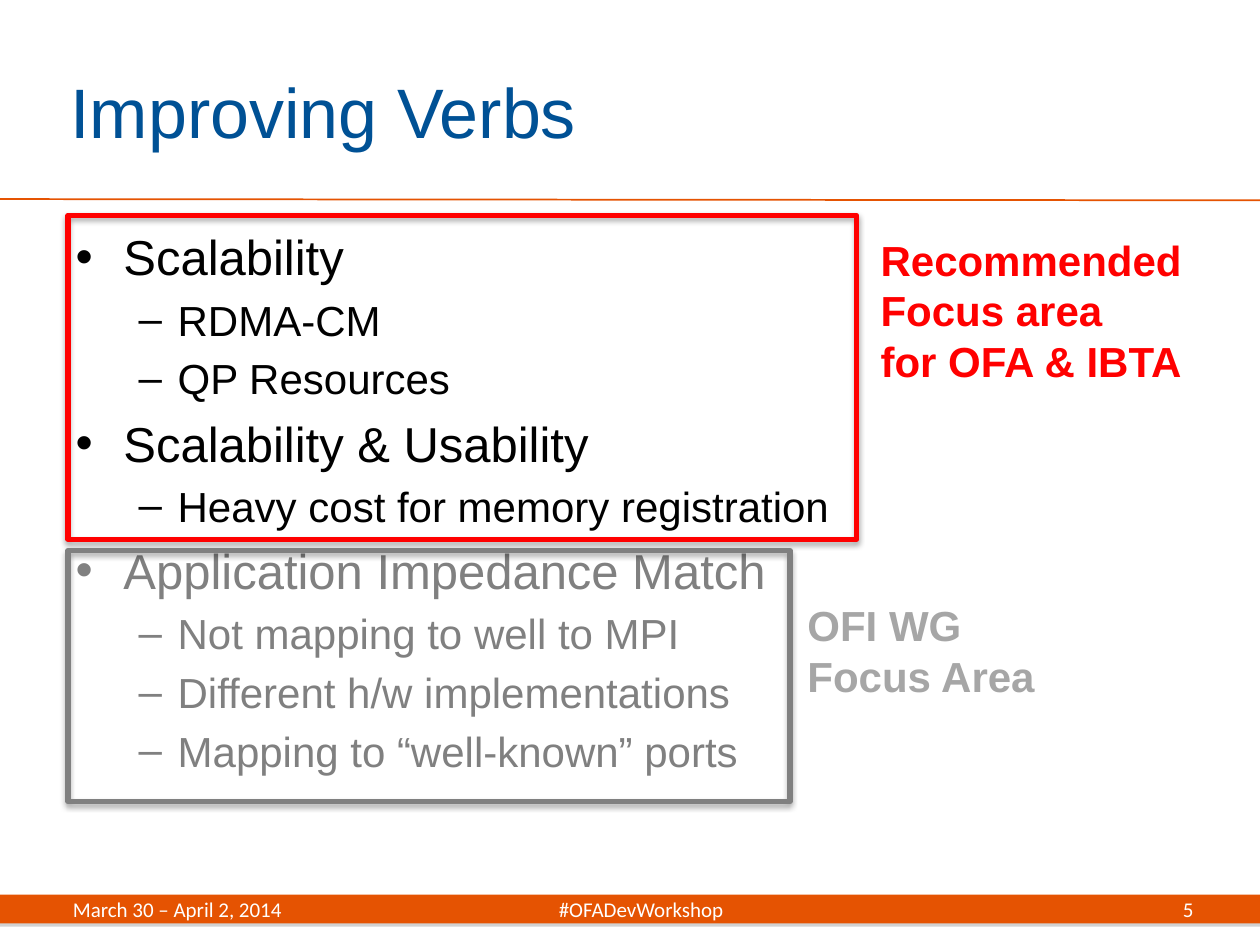
from lxml.etree import SubElement
from pptx import Presentation
from pptx.dml.color import RGBColor
from pptx.enum.shapes import MSO_CONNECTOR, MSO_SHAPE
from pptx.enum.text import MSO_ANCHOR, MSO_AUTO_SIZE, PP_ALIGN
from pptx.oxml import parse_xml
from pptx.oxml.ns import nsdecls, qn
from pptx.util import Inches, Pt

ORANGE = RGBColor(0xE5, 0x53, 0x02)
BLUE = RGBColor(0x00, 0x51, 0x95)
RED = RGBColor(0xFF, 0x00, 0x00)
GRAY = RGBColor(0x80, 0x80, 0x80)
LIGHT_GRAY = RGBColor(0xA6, 0xA6, 0xA6)
BLACK = RGBColor(0x00, 0x00, 0x00)
WHITE = RGBColor(0xFF, 0xFF, 0xFF)

BAR_TOP, BAR_HEIGHT = 7.1, 0.23


def style_text(paragraphs, font_name, size, color, bold=False):
    for paragraph in paragraphs:
        for run in paragraph.runs:
            run.font.name, run.font.size = font_name, Pt(size)
            run.font.color.rgb, run.font.bold = color, bold


def add_box(left, top, width, height, shadow_color, blur):
    box = slide.shapes.add_shape(MSO_SHAPE.RECTANGLE, Inches(left), Inches(top),
                                 Inches(width), Inches(height))
    box._element.spPr.append(parse_xml(
        f'<a:effectLst {nsdecls("a")}><a:outerShdw blurRad="{Pt(blur)}" dist="{Pt(1.8)}" '
        f'dir="5400000" rotWithShape="0"><a:srgbClr val="{shadow_color}">'
        '<a:alpha val="35000"/></a:srgbClr></a:outerShdw></a:effectLst>'))
    return box


prs = Presentation()
prs.slide_width, prs.slide_height = Inches(10), Inches(7.5)
slide = prs.slides.add_slide(prs.slide_layouts[1])

# Footer bar and rule under the title
bar = add_box(0, BAR_TOP, 10, BAR_HEIGHT, GRAY, 0)
bar.fill.solid()
bar.fill.fore_color.rgb = ORANGE
bar.line.fill.background()

rule = slide.shapes.add_connector(MSO_CONNECTOR.STRAIGHT, 0, Inches(1.58),
                                  prs.slide_width, Inches(1.59))
rule.line.color.rgb = ORANGE
rule.line.width = Pt(1)
SubElement(rule._element.spPr, qn("a:effectLst"))

# Title
title = slide.shapes.title
title.left, title.top, title.width, title.height = map(Inches, (0.46, 0.25, 8.61, 1.25))
title.text_frame.text = "Improving Verbs"
title.text_frame.vertical_anchor = MSO_ANCHOR.MIDDLE
title.text_frame.paragraphs[0].alignment = PP_ALIGN.LEFT
style_text(title.text_frame.paragraphs, "Arial", 40, BLUE)

# Topics: level, text, colour
topics = [
    (0, "Scalability", BLACK),
    (1, "RDMA-CM", BLACK),
    (1, "QP Resources", BLACK),
    (0, "Scalability & Usability", BLACK),
    (1, "Heavy cost for memory registration", BLACK),
    (0, "Application Impedance Match", GRAY),
    (1, "Not mapping to well to MPI", GRAY),
    (1, "Different h/w implementations", GRAY),
    (1, "Mapping to “well-known” ports", GRAY),
]
# Per level: size, left margin, hanging indent, bullet
levels = [(28, 0.38, -0.38, "•"), (24, 0.81, -0.31, "–")]

body = slide.placeholders[1]
body.left, body.top, body.width, body.height = map(Inches, (0.5, 1.75, 9.39, 5.08))
body.text_frame.text = "\n".join(text for _, text, _ in topics)
body.text_frame.auto_size = MSO_AUTO_SIZE.NONE
for index, (paragraph, (level, _, color)) in enumerate(zip(body.text_frame.paragraphs, topics)):
    size, margin, indent, bullet = levels[level]
    paragraph.level = level
    properties = paragraph._p.get_or_add_pPr()
    properties.set("marL", str(Inches(margin)))
    properties.set("indent", str(Inches(indent)))
    SubElement(properties, qn("a:buFont"), typeface="Arial")
    SubElement(properties, qn("a:buChar"), char=bullet)
    paragraph.space_before = Pt(size * 0.2) if index else Pt(0)
    style_text([paragraph], "Arial", size, color)

# Footer text: date and hashtag share a line, page number on the right
for left, width, text, align in [
    (0.48, 9.05, "March 30 – April 2, 2014\t#OFADevWorkshop", PP_ALIGN.LEFT),
    (8.38, 1.19, "5", PP_ALIGN.RIGHT),
]:
    footer = slide.shapes.add_textbox(Inches(left), Inches(BAR_TOP),
                                      Inches(width), Inches(BAR_HEIGHT)).text_frame
    footer.text = text
    footer.word_wrap = True
    footer.vertical_anchor = MSO_ANCHOR.MIDDLE
    line = footer.paragraphs[0]
    if "\t" in text:
        tabs = SubElement(line._p.get_or_add_pPr(), qn("a:tabLst"))
        SubElement(tabs, qn("a:tab"), pos=str(Inches(4.51)), algn="ctr")
    line.alignment = align
    style_text([line], "Calibri", 12, WHITE)

# Focus areas: a frame around the topics and a label beside it
for frame, frame_color, label, text, label_color in [
    ((0.54, 1.71, 6.26, 2.57), RED,
     (6.89, 1.81, 2.62, 1.31), "Recommended\nFocus area\vfor OFA & IBTA", RED),
    ((0.54, 4.37, 5.73, 1.99), GRAY,
     (6.31, 4.71, 2.02, 0.91), "OFI WG\nFocus Area", LIGHT_GRAY),
]:
    outline = add_box(*frame, BLACK, 3.1)
    outline.fill.background()
    outline.line.color.rgb = frame_color
    outline.line.width = Pt(3)

    caption = slide.shapes.add_textbox(*map(Inches, label)).text_frame
    caption.text = text
    caption.word_wrap = False
    caption.auto_size = MSO_AUTO_SIZE.SHAPE_TO_FIT_TEXT
    style_text(caption.paragraphs, "Arial", 24, label_color, bold=True)

prs.save("out.pptx")
